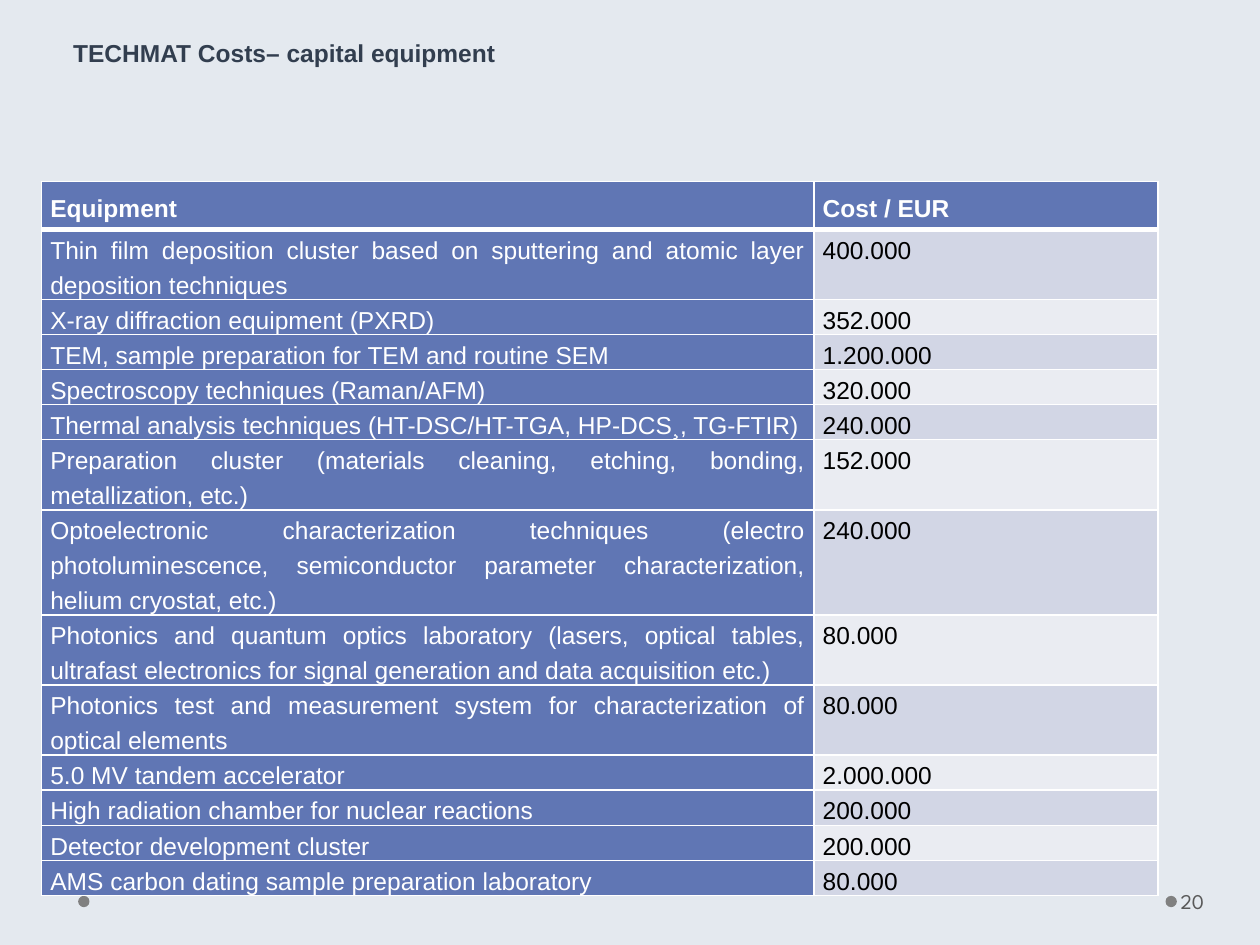
from lxml import etree
from pptx import Presentation
from pptx.dml.color import RGBColor
from pptx.enum.shapes import MSO_SHAPE
from pptx.enum.text import MSO_ANCHOR, PP_ALIGN
from pptx.oxml.ns import qn
from pptx.util import Inches, Pt

OVAL = MSO_SHAPE.OVAL
TOP, MIDDLE = MSO_ANCHOR.TOP, MSO_ANCHOR.MIDDLE
LEFT, JUSTIFY = PP_ALIGN.LEFT, PP_ALIGN.JUSTIFY
TITLE_ONLY = 5

COLORS = {
    "background": "E4E9EF",
    "title": "323E4F",
    "blue": "6076B4",
    "band_dark": "D2D6E5",
    "band_light": "EAECF2",
    "white": "FFFFFF",
    "black": "000000",
    "dot": "808080",
    "number": "595959",
}
BODY_FONT = "Arial"
NUMBER_FONT = "League Spartan"
LINE_SPACING = Pt(20)
HEADER = ("Equipment", "Cost / EUR")

# Equipment, cost, number of text lines
EQUIPMENT = [
    ("Thin film deposition cluster based on sputtering and atomic layer "
     "deposition techniques", "400.000", 2),
    ("X-ray diffraction equipment (PXRD)", "352.000", 1),
    ("TEM, sample preparation for TEM and routine SEM", "1.200.000", 1),
    ("Spectroscopy techniques (Raman/AFM)", "320.000", 1),
    ("Thermal analysis techniques (HT-DSC/HT-TGA, HP-DCS¸, TG-FTIR)", "240.000", 1),
    ("Preparation cluster (materials cleaning, etching, bonding, "
     "metallization, etc.)", "152.000", 2),
    ("Optoelectronic characterization techniques (electro photoluminescence, "
     "semiconductor parameter characterization, helium cryostat, etc.)", "240.000", 3),
    ("Photonics and quantum optics laboratory (lasers, optical tables, ultrafast "
     "electronics for signal generation and data acquisition etc.)", "80.000", 2),
    ("Photonics test and measurement system for characterization of optical "
     "elements", "80.000", 2),
    ("5.0 MV tandem accelerator", "2.000.000", 1),
    ("High radiation chamber for nuclear reactions", "200.000", 1),
    ("Detector development cluster", "200.000", 1),
    ("AMS carbon dating sample preparation laboratory", "80.000", 1),
]


def color(name):
    return RGBColor.from_string(COLORS[name])


def add_run(paragraph, text, size, color_name, font=BODY_FONT, bold=False):
    run = paragraph.add_run()
    run.text = text
    run.font.size = Pt(size)
    run.font.name = font
    run.font.bold = bold
    run.font.color.rgb = color(color_name)


def set_margins(frame, left, top, right, bottom):
    frame.margin_left, frame.margin_top = Inches(left), Inches(top)
    frame.margin_right, frame.margin_bottom = Inches(right), Inches(bottom)


def set_title(slide, text):
    title = slide.shapes.title
    title.left, title.top = Inches(0.48), Inches(0.24)
    title.width, title.height = Inches(3.64), Inches(0.57)
    frame = title.text_frame
    frame.word_wrap = True
    frame.vertical_anchor = TOP
    set_margins(frame, 0.1, 0.06, 0.1, 0.05)
    paragraph = frame.paragraphs[0]
    paragraph.alignment = LEFT
    paragraph.line_spacing = 1.0
    paragraph.space_before = Pt(0)
    add_run(paragraph, text, 14, "title", bold=True)


def add_dot(slide, left):
    dot = slide.shapes.add_shape(
        OVAL, Inches(left), Inches(7.11), Inches(0.09), Inches(0.09))
    dot.shadow.inherit = False
    dot.fill.solid()
    dot.fill.fore_color.rgb = color("dot")
    dot.line.fill.background()


def add_page_number(slide, text):
    box = slide.shapes.add_textbox(
        Inches(9.34), Inches(6.95), Inches(0.61), Inches(0.4))
    frame = box.text_frame
    frame.word_wrap = True
    frame.vertical_anchor = MIDDLE
    set_margins(frame, 0.03, 0.05, 0.05, 0.05)
    add_run(frame.paragraphs[0], text, 12, "number", NUMBER_FONT)


def set_borders(cell, top, bottom):
    properties = cell._tc.get_or_add_tcPr()
    for tag, width in (("lnL", 1), ("lnR", 1), ("lnT", top), ("lnB", bottom)):
        line = etree.SubElement(properties, qn(f"a:{tag}"), w=str(Pt(width)))
        fill = etree.SubElement(line, qn("a:solidFill"))
        etree.SubElement(fill, qn("a:srgbClr"), val=COLORS["white"])


def fill_cell(cell, text, fill, text_color, bold=False, top=1, bottom=1):
    set_borders(cell, top, bottom)
    cell.fill.solid()
    cell.fill.fore_color.rgb = color(fill)
    set_margins(cell, 0.07, 0, 0.07, 0)
    cell.vertical_anchor = MIDDLE if bold else TOP
    paragraph = cell.text_frame.paragraphs[0]
    paragraph.alignment = JUSTIFY
    paragraph.line_spacing = LINE_SPACING
    add_run(paragraph, text, 14, text_color, bold=bold)


def add_cost_table(slide):
    table = slide.shapes.add_table(
        len(EQUIPMENT) + 1, len(HEADER),
        Inches(0.33), Inches(1.44), Inches(8.86), Inches(5.66)).table
    table.first_row = True
    table.horz_banding = False
    for column, width in zip(table.columns, (6.13, 2.73)):
        column.width = Inches(width)

    # Header row with a thick line below
    table.rows[0].height = Inches(0.38)
    for column, text in enumerate(HEADER):
        fill_cell(table.cell(0, column), text, "blue", "white", bold=True, bottom=3)

    # Body rows, as high as their lines of text
    for row, (name, cost, lines) in enumerate(EQUIPMENT, start=1):
        table.rows[row].height = LINE_SPACING * lines
        top = 3 if row == 1 else 1
        band = "band_dark" if row % 2 else "band_light"
        fill_cell(table.cell(row, 0), name, "blue", "white", top=top)
        fill_cell(table.cell(row, 1), cost, band, "black", top=top)


def main():
    presentation = Presentation()
    presentation.slide_width, presentation.slide_height = Inches(10), Inches(7.5)
    slide = presentation.slides.add_slide(presentation.slide_layouts[TITLE_ONLY])
    slide.background.fill.solid()
    slide.background.fill.fore_color.rgb = color("background")

    # Footer dots and page number
    for left in (9.25, 0.62):
        add_dot(slide, left)
    add_page_number(slide, "20")

    add_cost_table(slide)
    set_title(slide, "TECHMAT Costs– capital equipment")
    presentation.save("out.pptx")


if __name__ == "__main__":
    main()
